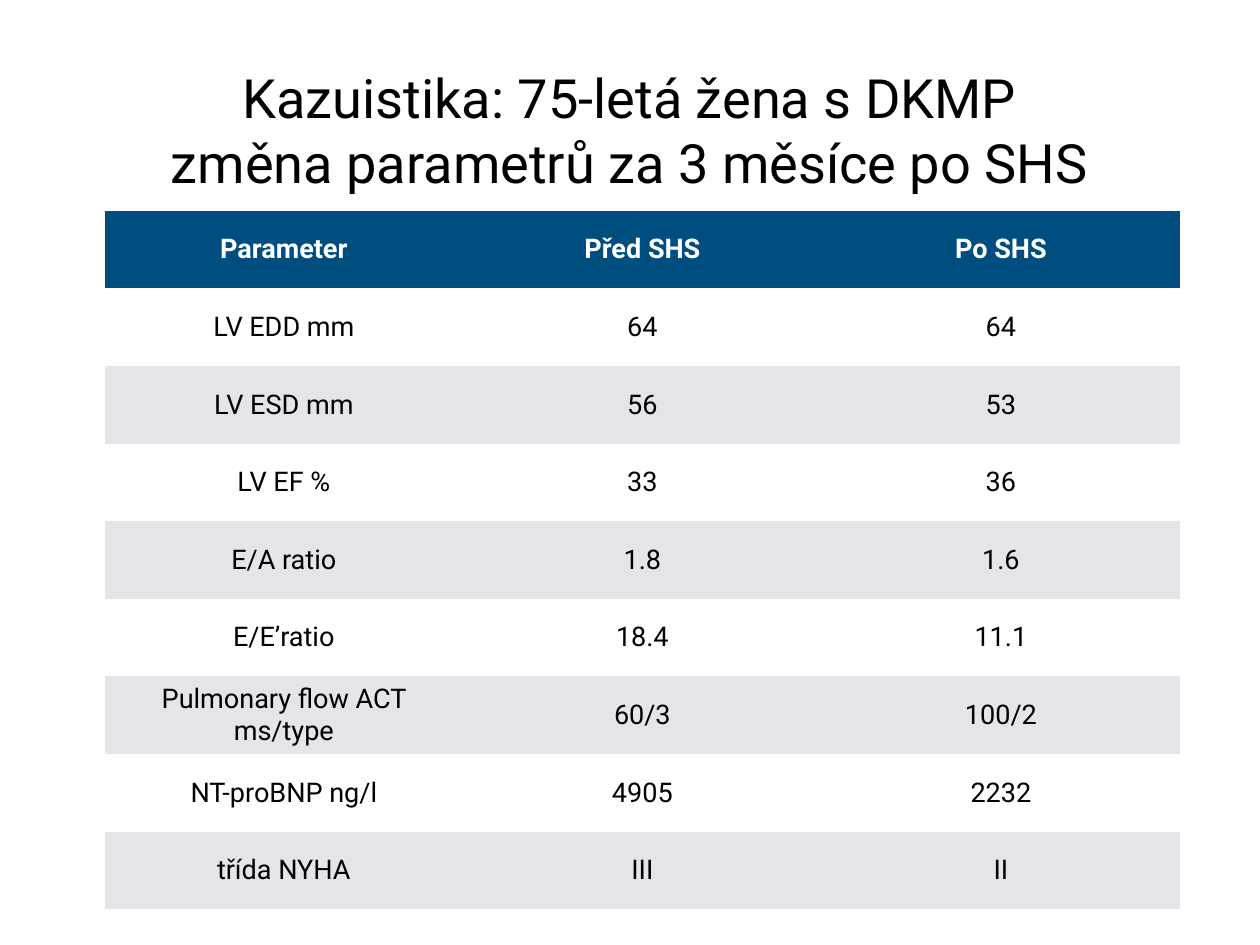
from pptx import Presentation
from pptx import util as u
from pptx.dml import color
from pptx.enum import text

COLORS = {"header": "004D80", "band": "E3E5E8", "white": "FFFFFF", "black": "000000"}
PLAIN_TABLE_STYLE = "{2D5ABB26-0587-4C30-8999-92F81FD0307C}"

TITLE_LINES = ["Kazuistika: 75-letá žena s DKMP", "změna parametrů za 3 měsíce po SHS"]
PARAMETERS = [
    ("Parameter", "Před SHS", "Po SHS"),
    ("LV EDD mm", "64", "64"),
    ("LV ESD mm", "56", "53"),
    ("LV EF %", "33", "36"),
    ("E/A ratio", "1.8", "1.6"),
    ("E/E’ratio", "18.4", "11.1"),
    ("Pulmonary flow ACT ms/type", "60/3", "100/2"),
    ("NT-proBNP ng/l", "4905", "2232"),
    ("třída NYHA", "III", "II"),
]


def rgb(name):
    return color.RGBColor.from_string(COLORS[name])


def write(frame, lines, *, font, size, fill="black", bold=False):
    """Write centred lines, parted by line breaks, into one paragraph."""
    frame.word_wrap = True
    paragraph = frame.paragraphs[0]
    paragraph.alignment = text.PP_ALIGN.CENTER
    for number, line in enumerate(lines):
        if number:
            paragraph.add_line_break()
        run = paragraph.add_run()
        run.text = line
        run.font.name = font
        run.font.size = u.Pt(size)
        run.font.bold = bold
        run.font.color.rgb = rgb(fill)


class SlideBuilder:
    """Places elements on a grid of twelve columns and nine rows."""

    font = "Roboto"
    left, top = u.Inches(1.18), u.Inches(2.38)
    column, row = u.Inches(12.14) / 12, u.Inches(7.89) / 9
    inset = u.Inches(0.06)

    def __init__(self, slide):
        self.slide = slide

    def place(self, column, row, columns, rows):
        return (round(self.left + column * self.column), round(self.top + row * self.row),
                round(columns * self.column), round(rows * self.row))

    def pad(self, box):
        box.margin_left = box.margin_right = self.inset
        box.margin_top = box.margin_bottom = self.inset
        box.vertical_anchor = text.MSO_ANCHOR.MIDDLE

    def title(self, lines, *area):
        frame = self.slide.shapes.add_textbox(*self.place(*area)).text_frame
        self.pad(frame)
        write(frame, lines, font=self.font, size=44)

    def table(self, records, *area):
        shape = self.slide.shapes.add_table(len(records), len(records[0]), *self.place(*area))
        table = shape.table
        table.horz_banding = False
        table._tbl.tblPr.find("{*}tableStyleId").text = PLAIN_TABLE_STYLE
        for r, record in enumerate(records):
            header = r == 0
            fill = "header" if header else "white" if r % 2 else "band"
            for c, value in enumerate(record):
                cell = table.cell(r, c)
                self.pad(cell)
                cell.fill.solid()
                cell.fill.fore_color.rgb = rgb(fill)
                write(cell.text_frame, [value], font=self.font, size=22, bold=header,
                      fill="white" if header else "black")


def main():
    presentation = Presentation()
    presentation.slide_width = u.Inches(14.22)
    presentation.slide_height = u.Inches(10.67)
    slide = presentation.slides.add_slide(presentation.slide_layouts[6])
    builder = SlideBuilder(slide)

    # Parameters before and after
    builder.table(PARAMETERS, 0, 0, 12, 9)

    # Title above the table
    builder.title(TITLE_LINES, -0.14, -2.39, 12, 2.69)

    presentation.save("out.pptx")


if __name__ == "__main__":
    main()
